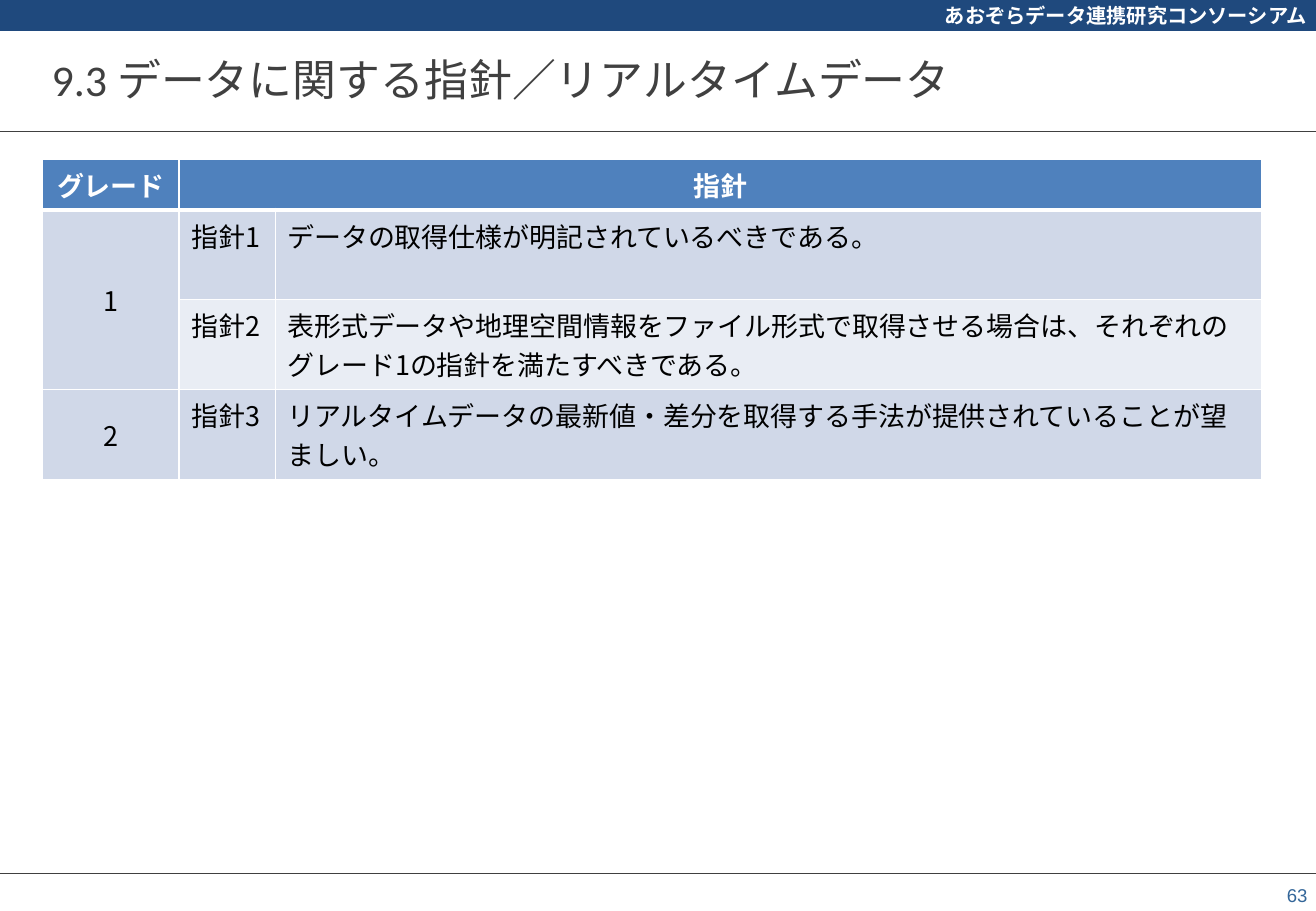
"""Build the slide on guidelines for real-time data."""
from dataclasses import dataclass

from lxml.etree import SubElement
from pptx import Presentation
from pptx.dml.color import RGBColor
from pptx.enum.shapes import MSO_CONNECTOR, MSO_SHAPE
from pptx.enum.text import MSO_ANCHOR, PP_ALIGN
from pptx.oxml.ns import qn
from pptx.slide import Slide
from pptx.table import _Cell
from pptx.text.text import TextFrame
from pptx.util import Inches, Pt

COLUMNS, ROWS = 130, 90
UNIT = Inches(1 / 12)


@dataclass(frozen=True)
class Theme:
    """Colours, fonts and type sizes."""
    navy: str = "1F497D"
    rule: str = "404040"
    white: str = "FFFFFF"
    black: str = "000000"
    header: str = "4F81BD"
    band_dark: str = "D0D8E8"
    band_light: str = "E9EDF4"
    number: str = "336699"
    japanese: str = "Noto Sans CJK JP"
    heading: str = "Calibri"
    digits: str = "Arial"
    title_size: int = 26
    table_size: int = 16
    banner_size: int = 12
    number_size: int = 11


@dataclass(frozen=True)
class Area:
    """A rectangle in grid columns and rows."""
    left: float
    top: float
    width: float
    height: float

    def lengths(self) -> tuple[int, ...]:
        """Return the rectangle as slide lengths."""
        return tuple(map(grid, (self.left, self.top, self.width, self.height)))


@dataclass(frozen=True)
class TableCell:
    """One table cell with its place, span and look."""
    row: int
    column: int
    text: str
    fill: str
    row_span: int = 1
    column_span: int = 1
    centred: bool = False


THEME = Theme()
BANNER = Area(0, 0, COLUMNS, 3)
TITLE = Area(5.1, 4, 120, 7.7)
TABLE = Area(4.2, 15.75, 120.4, 31.6)
PAGE_NUMBER = Area(124.6, 86.6, 5.4, 3.4)
RULE_ROWS = (13, 86.3)
TABLE_COLUMNS = (13.5, 9.5, 97.4)
TABLE_ROWS = (4.99, 8.87, 8.87, 8.87)
CELLS = (
    TableCell(0, 0, "グレード", THEME.header, centred=True),
    TableCell(0, 1, "指針", THEME.header, column_span=2, centred=True),
    TableCell(1, 0, "1", THEME.band_dark, row_span=2, centred=True),
    TableCell(1, 1, "指針1", THEME.band_dark),
    TableCell(1, 2, "データの取得仕様が明記されているべきである。", THEME.band_dark),
    TableCell(2, 1, "指針2", THEME.band_light),
    TableCell(2, 2, "表形式データや地理空間情報をファイル形式で取得させる場合は、"
              "それぞれのグレード1の指針を満たすべきである。", THEME.band_light),
    TableCell(3, 0, "2", THEME.band_dark, centred=True),
    TableCell(3, 1, "指針3", THEME.band_dark),
    TableCell(3, 2, "リアルタイムデータの最新値・差分を取得する手法が"
              "提供されていることが望ましい。", THEME.band_dark),
)


def grid(count: float) -> int:
    """Turn grid units into a slide length."""
    return round(count * UNIT)


def colour(code: str) -> RGBColor:
    """Turn a colour code into a colour."""
    return RGBColor.from_string(code)


def write(frame: TextFrame, text: str, *, size: int, ink: str,
          font: str = THEME.japanese, bold: bool = False,
          align: PP_ALIGN = PP_ALIGN.LEFT) -> None:
    """Write one formatted paragraph."""
    para = frame.paragraphs[0]
    para.alignment = align
    span = para.add_run()
    span.text = text
    span.font.size = Pt(size)
    span.font.bold = bold
    span.font.name = font
    span.font.color.rgb = colour(ink)
    SubElement(span.font._element, qn("a:ea"), typeface=THEME.japanese)


def set_frame(frame: TextFrame, anchor: MSO_ANCHOR, *, wrap: bool = True,
              side: float = 0.07, end: float = 0.04) -> TextFrame:
    """Set the anchor, wrapping and insets of a text frame."""
    frame.word_wrap = wrap
    frame.vertical_anchor = anchor
    frame.margin_left = frame.margin_right = Inches(side)
    frame.margin_top = frame.margin_bottom = Inches(end)
    return frame


def draw_banner(page: Slide) -> None:
    """Draw the coloured band at the top."""
    band = page.shapes.add_shape(MSO_SHAPE.RECTANGLE, *BANNER.lengths())
    band.shadow.inherit = False
    band.fill.solid()
    band.fill.fore_color.rgb = colour(THEME.navy)
    band.line.color.rgb = colour(THEME.navy)
    band.line.width = Pt(0.75)
    write(set_frame(band.text_frame, MSO_ANCHOR.MIDDLE, wrap=False),
          "あおぞらデータ連携研究コンソーシアム", size=THEME.banner_size,
          ink=THEME.white, bold=True, align=PP_ALIGN.RIGHT)


def draw_rule(page: Slide, row: float) -> None:
    """Draw a line across the slide."""
    rule = page.shapes.add_connector(
        MSO_CONNECTOR.STRAIGHT, 0, grid(row), grid(COLUMNS), grid(row))
    rule.line.color.rgb = colour(THEME.rule)
    rule.line.width = Pt(1)
    SubElement(rule._element.spPr, qn("a:effectLst"))


def set_borders(cell: _Cell, bottom: float) -> None:
    """Give a cell white borders beneath its fill."""
    properties = cell._tc.get_or_add_tcPr()
    widths = {"a:lnL": 1, "a:lnR": 1, "a:lnT": 1, "a:lnB": bottom}
    for index, (side, width) in enumerate(widths.items()):
        border = SubElement(properties, qn(side), w=str(Pt(width)))
        fill = SubElement(border, qn("a:solidFill"))
        SubElement(fill, qn("a:srgbClr"), val=THEME.white)
        properties.insert(index, border)


def draw_table(page: Slide) -> None:
    """Draw the table of grades and guidelines."""
    table = page.shapes.add_table(
        len(TABLE_ROWS), len(TABLE_COLUMNS), *TABLE.lengths()).table
    for column, width in zip(table.columns, TABLE_COLUMNS):
        column.width = grid(width)
    for row, height in zip(table.rows, TABLE_ROWS):
        row.height = grid(height)
    for item in CELLS:
        cell = table.cell(item.row, item.column)
        if item.row_span * item.column_span > 1:
            cell.merge(table.cell(item.row + item.row_span - 1,
                                  item.column + item.column_span - 1))
        is_header = item.row == 0
        cell.fill.solid()
        cell.fill.fore_color.rgb = colour(item.fill)
        cell.vertical_anchor = (MSO_ANCHOR.MIDDLE if item.centred and not is_header
                                else MSO_ANCHOR.TOP)
        write(cell.text_frame, item.text, size=THEME.table_size,
              ink=THEME.white if is_header else THEME.black, bold=is_header,
              align=PP_ALIGN.CENTER if item.centred else PP_ALIGN.LEFT)
    for index, row in enumerate(table.rows):
        for cell in row.cells:
            set_borders(cell, 3 if index == 0 else 1)


def main() -> None:
    """Build and save the deck."""
    deck = Presentation()
    deck.slide_width, deck.slide_height = grid(COLUMNS), grid(ROWS)
    page = deck.slides.add_slide(deck.slide_layouts[6])
    draw_banner(page)
    for row in RULE_ROWS:
        draw_rule(page, row)
    title = page.shapes.add_textbox(*TITLE.lengths())
    write(set_frame(title.text_frame, MSO_ANCHOR.MIDDLE, side=0, end=0),
          "9.3 データに関する指針／リアルタイムデータ", size=THEME.title_size,
          ink=THEME.rule, font=THEME.heading)
    draw_table(page)
    number = page.shapes.add_textbox(*PAGE_NUMBER.lengths())
    write(set_frame(number.text_frame, MSO_ANCHOR.BOTTOM), "63",
          size=THEME.number_size, ink=THEME.number, font=THEME.digits,
          align=PP_ALIGN.RIGHT)
    deck.save("out.pptx")


if __name__ == "__main__":
    main()
